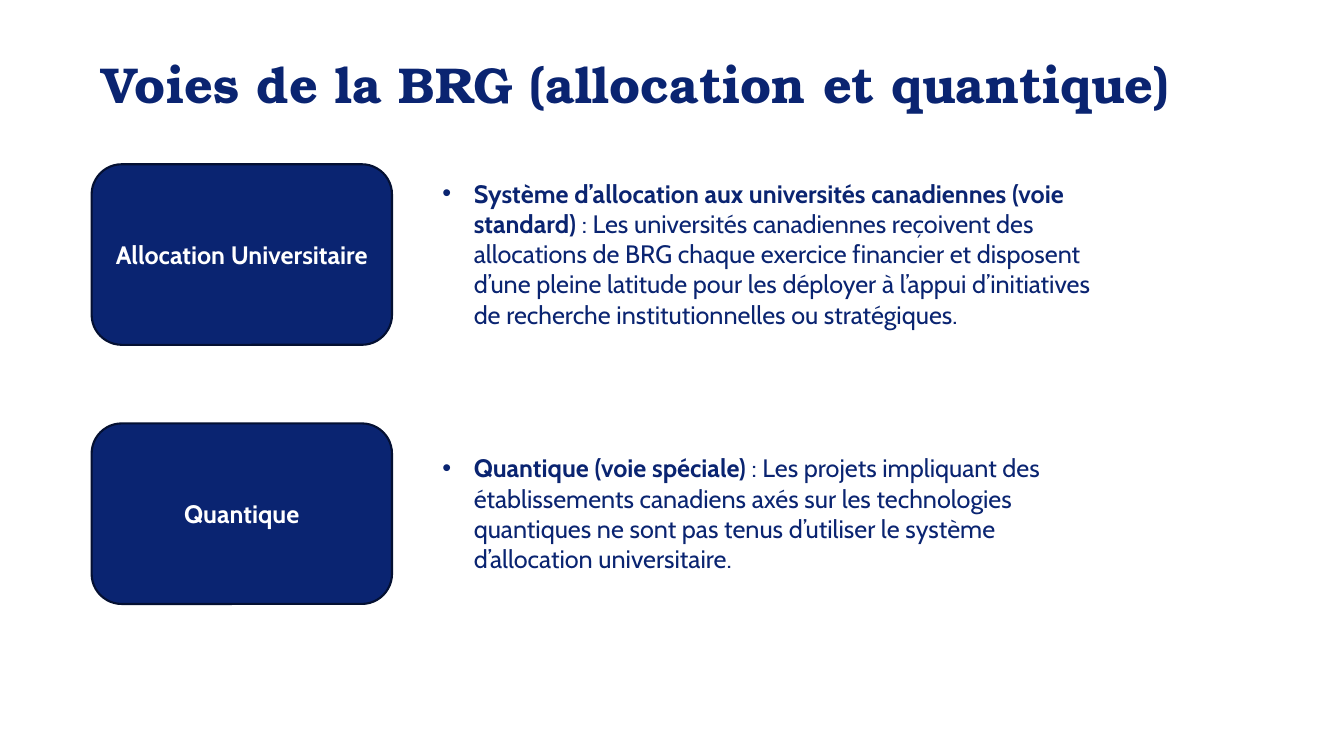
import pptx
import pptx.util
from lxml import etree
from pptx.dml.color import RGBColor
from pptx.enum.shapes import MSO_SHAPE
from pptx.enum.text import MSO_ANCHOR, MSO_AUTO_SIZE, PP_ALIGN
from pptx.oxml.ns import qn
from pptx.util import Cm, Pt

TITLE = "Voies de la BRG (allocation et quantique)"
# Box label, bold lead, description, height of the description in cm
STREAMS = [
    ("Allocation Universitaire",
     "Système d’allocation aux universités canadiennes (voie standard)",
     " : Les universités canadiennes reçoivent des allocations de BRG chaque "
     "exercice financier et disposent d’une pleine latitude pour les déployer "
     "à l’appui d’initiatives de recherche institutionnelles ou stratégiques.",
     4.11),
    ("Quantique",
     "Quantique (voie spéciale)",
     " : Les projets impliquant des établissements canadiens axés sur les "
     "technologies quantiques ne sont pas tenus d’utiliser le système "
     "d’allocation universitaire.",
     3.33),
]

NAVY = RGBColor(0x0A, 0x24, 0x71)
DARK_NAVY = RGBColor(0x04, 0x10, 0x32)
WHITE = RGBColor(0xFF, 0xFF, 0xFF)

TITLE_FONT = {"name": "TeX Gyre Bonum", "size": Pt(36), "bold": True}
BODY_FONT = {"name": "Cabin", "size": Pt(18), "bold": False}
BOLD_FONT = {**BODY_FONT, "bold": True}

LEFT, FIRST_TOP, ROW_STEP = 2.31, 4.14, 6.53
BOX_WIDTH, BOX_HEIGHT = 7.57, 4.55
TEXT_LEFT, TEXT_WIDTH = 10.9, 17.45
BULLET_INDENT = Cm(0.79)


def add_run(p, text, font, color):
    r = p.add_run()
    r.text = text
    for name, value in font.items():
        setattr(r.font, name, value)
    r.font.color.rgb = color


def add_text_box(s, left, top, width, height):
    tf = s.shapes.add_textbox(Cm(left), Cm(top), Cm(width), Cm(height)).text_frame
    tf.word_wrap = True
    return tf


def add_label_box(s, top, label):
    sp = s.shapes.add_shape(MSO_SHAPE.ROUNDED_RECTANGLE, Cm(LEFT), Cm(top),
                            Cm(BOX_WIDTH), Cm(BOX_HEIGHT))
    sp.shadow.inherit = False
    sp.fill.solid()
    sp.fill.fore_color.rgb = NAVY
    sp.line.color.rgb = DARK_NAVY
    sp.line.width = Pt(1.5)
    tf = sp.text_frame
    tf.word_wrap = True
    tf.vertical_anchor = MSO_ANCHOR.MIDDLE
    p = tf.paragraphs[0]
    p.alignment = PP_ALIGN.CENTER
    add_run(p, label, BOLD_FONT, WHITE)


def add_description(s, top, height, lead, description):
    tf = add_text_box(s, TEXT_LEFT, top, TEXT_WIDTH, height)
    tf.auto_size = MSO_AUTO_SIZE.SHAPE_TO_FIT_TEXT
    p = tf.paragraphs[0]
    pPr = p._p.get_or_add_pPr()
    pPr.set("marL", str(BULLET_INDENT))
    pPr.set("indent", str(-BULLET_INDENT))
    etree.SubElement(pPr, qn("a:buFont"), typeface="Arial")
    etree.SubElement(pPr, qn("a:buChar"), char="•")
    add_run(p, lead, BOLD_FONT, NAVY)
    add_run(p, description, BODY_FONT, NAVY)


def main():
    prs = pptx.Presentation()
    prs.slide_width, prs.slide_height = Cm(33.87), Cm(19.05)
    s = prs.slides.add_slide(prs.slide_layouts[6])

    tf = add_text_box(s, LEFT, 1.14, 29.21, 2.11)
    tf.vertical_anchor = MSO_ANCHOR.MIDDLE
    tf.paragraphs[0].line_spacing = 0.9
    add_run(tf.paragraphs[0], TITLE, TITLE_FONT, NAVY)

    for row, (label, lead, description, height) in enumerate(STREAMS):
        top = FIRST_TOP + row * ROW_STEP
        add_label_box(s, top, label)
        add_description(s, top + (BOX_HEIGHT - height) / 2, height, lead, description)

    prs.save("out.pptx")


if __name__ == "__main__":
    main()
